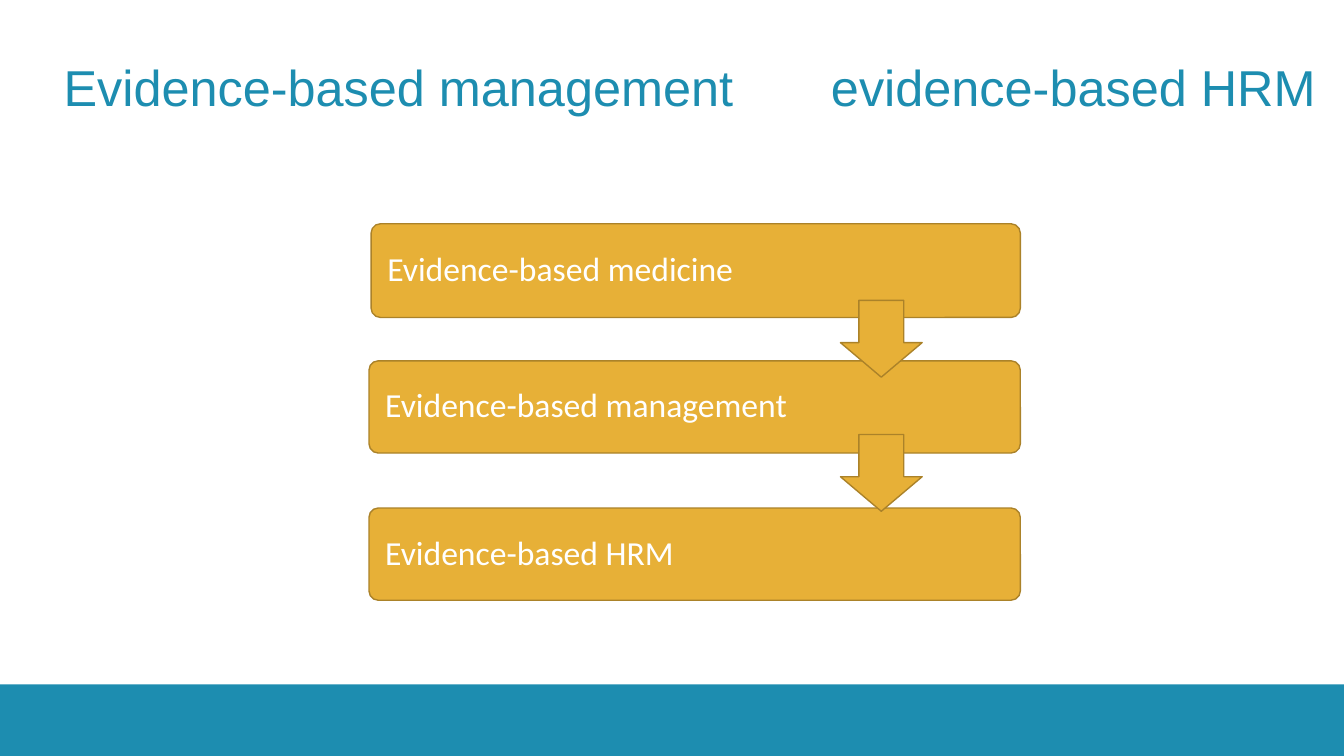
import pptx
import pptx.util
import pptx.dml.color
import pptx.enum.shapes
import pptx.enum.text
import pptx.oxml

COLORS = {"teal": "1D8DB0", "gold": "E7B037", "edge": "AB8229", "white": "FFFFFF"}
SHAPES = pptx.enum.shapes.MSO_SHAPE
MIDDLE = pptx.enum.text.MSO_ANCHOR.MIDDLE
LEFT = pptx.enum.text.PP_ALIGN.LEFT

prs = pptx.Presentation()
prs.slide_width = pptx.util.Inches(13.33)
prs.slide_height = pptx.util.Inches(7.5)
col = prs.slide_width / 100   # one percent of the slide's width
row = prs.slide_height / 100  # one percent of the slide's height
s = prs.slides.add_slide(prs.slide_layouts[5])


def color(name):
    return pptx.dml.color.RGBColor.from_string(COLORS[name])


def add_block(kind, x, y, w, h, fill, line=None):
    sp = s.shapes.add_shape(kind, int(x * col), int(y * row), int(w * col), int(h * row))
    sp.shadow.inherit = False
    sp.fill.solid()
    sp.fill.fore_color.rgb = color(fill)
    if line:
        sp.line.color.rgb = color(line)
        sp.line.width = pptx.util.Pt(1)
    else:
        sp.line.fill.background()
    return sp


# Bottom band
add_block(SHAPES.RECTANGLE, 0, 90.53, 100, 9.47, "teal")

# Title, its second half set at a tab stop
title = s.shapes.title
title.left, title.top = int(4.73 * col), int(3.07 * row)
title.width, title.height = int(93.7 * col), int(16.8 * row)
tf = title.text_frame
tf.margin_left = tf.margin_right = tf.margin_top = tf.margin_bottom = 0
tf.vertical_anchor = MIDDLE
tf.word_wrap = True
tf.auto_size = pptx.enum.text.MSO_AUTO_SIZE.NONE
p = tf.paragraphs[0]
p.text = "Evidence-based management\tevidence-based HRM"
p.alignment = LEFT
tabs = pptx.oxml.parse_xml(
    '<a:tabLst xmlns:a="http://schemas.openxmlformats.org/drawingml/2006/main">'
    f'<a:tab pos="{int(57.1 * col)}" algn="l"/></a:tabLst>')
p._p.get_or_add_pPr().append(tabs)
p.font.name = "Arial"
p.font.size = pptx.util.Pt(36)
p.font.color.rgb = color("teal")

# Steps: text, left, top, height; all end at the same right edge
right = 75.92
steps = [
    ("Evidence-based medicine", 27.61, 29.6, 12.4),
    ("Evidence-based management", 27.46, 47.73, 12.2),
    ("Evidence-based HRM", 27.46, 67.2, 12.2),
]
for text, x, y, h in steps:
    sp = add_block(SHAPES.ROUNDED_RECTANGLE, x, y, right - x, h, "gold", "edge")
    sp.adjustments[0] = 0.1
    tf = sp.text_frame
    tf.word_wrap = True
    tf.vertical_anchor = MIDDLE
    tf.margin_left = tf.margin_top = tf.margin_bottom = int(col)
    tf.margin_right = int(11.8 * col)
    p = tf.paragraphs[0]
    p.text = text
    p.alignment = LEFT
    p.line_spacing = 0.9
    p.font.name = "Calibri"
    p.font.size = pptx.util.Pt(24)
    p.font.color.rgb = color("white")

# Arrows between the steps
for y in (39.73, 57.47):
    arrow = add_block(SHAPES.DOWN_ARROW, 62.53, y, 6.08, 10.16, "gold", "edge")
    arrow.adjustments[0] = 0.55
    arrow.adjustments[1] = 0.45

prs.save("out.pptx")
